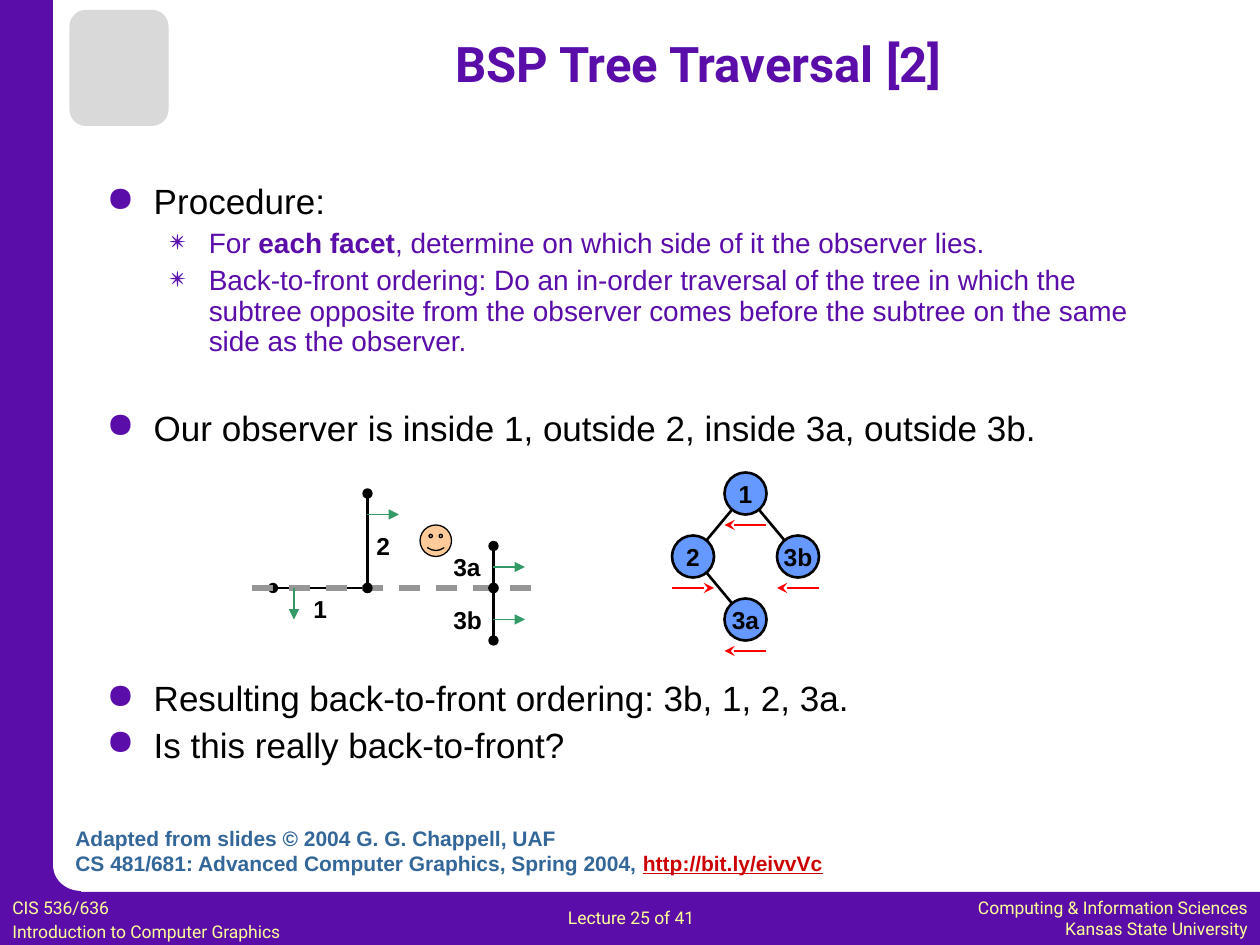
from dataclasses import dataclass

import pptx
import pptx.dml.color
import pptx.enum.dml
import pptx.enum.shapes
import pptx.enum.text
import pptx.oxml.ns
import pptx.util
from lxml import etree

Cm = pptx.util.Cm
Pt = pptx.util.Pt
SHAPE = pptx.enum.shapes.MSO_SHAPE
ALIGN = pptx.enum.text.PP_ALIGN
ANCHOR = pptx.enum.text.MSO_ANCHOR


@dataclass(frozen=True)
class Theme:
    purple: str = "5B0DAA"
    white: str = "FFFFFF"
    black: str = "000000"
    footer: str = "FFFF99"
    credit: str = "336699"
    link: str = "CC0000"
    node: str = "6699FF"
    travel: str = "FF0000"
    normal: str = "339966"
    plane: str = "969696"
    face: str = "FFCC99"
    emblem: str = "D9D9D9"
    heading_font: str = "Roboto"
    text_font: str = "Arial"
    title_size: int = 28
    topic_size: int = 20
    detail_size: int = 16
    label_size: int = 14
    credit_size: int = 12
    footer_size: int = 10


THEME = Theme()
GRID = 2.54 / 12
NODE_RADIUS = 2


def rgb(color):
    return pptx.dml.color.RGBColor.from_string(color)


def grid(*steps):
    return [Cm(step * GRID) for step in steps]


def style(paragraph, size, color, font=THEME.text_font, bold=False):
    paragraph.font.name = font
    paragraph.font.size = Pt(size)
    paragraph.font.bold = bold
    paragraph.font.color.rgb = rgb(color)


def add_figure(slide, kind, box, fill, outline=None, weight=1.5):
    figure = slide.shapes.add_shape(kind, *box)
    figure.shadow.inherit = False
    figure.fill.solid()
    figure.fill.fore_color.rgb = rgb(fill)
    if outline:
        figure.line.color.rgb = rgb(outline)
        figure.line.width = Pt(weight)
    else:
        figure.line.fill.background()
    return figure


def add_line(slide, start, end, color, weight=1.5, head=None, tail=None, dashed=False):
    line = slide.shapes.add_connector(
        pptx.enum.shapes.MSO_CONNECTOR.STRAIGHT, *grid(*start, *end))
    line.line.color.rgb = rgb(color)
    line.line.width = Pt(weight)
    if dashed:
        line.line.dash_style = pptx.enum.dml.MSO_LINE.DASH
    outline = line.line._get_or_add_ln()
    for tag, arrow in (("a:headEnd", head), ("a:tailEnd", tail)):
        if arrow:
            etree.SubElement(outline, pptx.oxml.ns.qn(tag), type=arrow)
    etree.SubElement(line._element.spPr, pptx.oxml.ns.qn("a:effectLst"))


def add_text(slide, box, lines, size, color, font=THEME.text_font, bold=False,
             align=ALIGN.LEFT, anchor=ANCHOR.TOP, gap=0):
    frame = slide.shapes.add_textbox(*box).text_frame
    frame.word_wrap = True
    frame.vertical_anchor = anchor
    for index, line in enumerate(lines):
        paragraph = frame.paragraphs[0] if index == 0 else frame.add_paragraph()
        paragraph.text = line
        paragraph.alignment = align
        if index:
            paragraph.space_before = Pt(gap)
        style(paragraph, size, color, font, bold)
    return frame


def add_bullet(paragraph, symbol, margin, hanging):
    properties = paragraph._p.get_or_add_pPr()
    properties.set("marL", str(Cm(margin)))
    properties.set("indent", str(-Cm(hanging)))
    bullet_color = etree.SubElement(properties, pptx.oxml.ns.qn("a:buClr"))
    etree.SubElement(bullet_color, pptx.oxml.ns.qn("a:srgbClr"), val=THEME.purple)
    etree.SubElement(properties, pptx.oxml.ns.qn("a:buChar"), char=symbol)


def add_body(slide):
    frame = slide.shapes.add_textbox(Cm(1.9), Cm(3.6), Cm(22.07), Cm(13.13)).text_frame
    frame.word_wrap = True
    points = [
        (0, 0, ["Procedure:"]),
        (1, 4, ["For ", "each facet", ", determine on which side of it the observer lies."]),
        (1, 4, ["Back-to-front ordering: Do an in-order traversal of the tree in which the "
                "subtree opposite from the observer comes before the subtree on the same "
                "side as the observer."]),
        (0, 30.5, ["Our observer is inside 1, outside 2, inside 3a, outside 3b."]),
        (0, 133, ["Resulting back-to-front ordering: 3b, 1, 2, 3a."]),
        (0, 5, ["Is this really back-to-front?"]),
    ]
    for index, (level, gap, parts) in enumerate(points):
        paragraph = frame.paragraphs[0] if index == 0 else frame.add_paragraph()
        paragraph.line_spacing = 0.9
        if gap:
            paragraph.space_before = Pt(gap)
        if level:
            paragraph.level = level
            add_bullet(paragraph, "✴", 2.06, 0.79)
            style(paragraph, THEME.detail_size, THEME.purple)
        else:
            add_bullet(paragraph, "●", 0.95, 0.95)
            style(paragraph, THEME.topic_size, THEME.black)
        for position, part in enumerate(parts):
            run = paragraph.add_run()
            run.text = part
            if position == 1:
                run.font.bold = True


def add_frame(slide):
    for box in ((0, 17.98, 25.4, 1.07), (0, 0, 1.07, 19.05), (0.51, 17.4, 1.12, 1.12)):
        add_figure(slide, SHAPE.RECTANGLE, map(Cm, box), THEME.purple)
    add_figure(slide, SHAPE.OVAL, map(Cm, (1.07, 16.92, 1.12, 1.04)), THEME.white)
    add_figure(slide, SHAPE.ROUNDED_RECTANGLE, map(Cm, (1.4, 0.2, 2, 2.34)), THEME.emblem)
    footers = [
        ((0, 17.95, 7.5, 1.1), ["CIS 536/636", "Introduction to Computer Graphics"],
         ALIGN.LEFT, 2),
        ((11.2, 18.15, 4, 0.7), ["Lecture 25 of 41"], ALIGN.LEFT, 0),
        ((18.24, 17.95, 7.16, 1.1),
         ["Computing & Information Sciences", "Kansas State University"], ALIGN.RIGHT, 0),
    ]
    for box, lines, align, gap in footers:
        add_text(slide, map(Cm, box), lines, THEME.footer_size, THEME.footer,
                 THEME.heading_font, align=align, gap=gap)


def add_scene(slide):
    walls = [((26, 56), (35, 56)), ((35, 47), (35, 56)),
             ((47, 52), (47, 56)), ((47, 56), (47, 61))]
    add_line(slide, *walls[0], THEME.black, head="oval", tail="oval")
    add_line(slide, (24, 56), (52, 56), THEME.plane, weight=3, dashed=True)
    for start, end in walls[1:]:
        add_line(slide, start, end, THEME.black, head="oval", tail="oval")
    for (x, y), (dx, dy) in (((28, 56), (0, 3)), ((35, 49), (3, 0)),
                             ((47, 54), (3, 0)), ((47, 59), (3, 0))):
        add_line(slide, (x, y), (x + dx, y + dy), THEME.normal, weight=0.75, tail="triangle")
    for name, x, y, width, align in (("1", 28, 56, 5, ALIGN.CENTER),
                                     ("2", 34, 50, 5, ALIGN.CENTER),
                                     ("3a", 42, 52, 6, ALIGN.LEFT),
                                     ("3b", 42, 57, 6, ALIGN.LEFT)):
        add_text(slide, grid(x, y, width, 4), [name], THEME.label_size, THEME.black,
                 bold=True, align=align)
    add_figure(slide, SHAPE.SMILEY_FACE, grid(40, 50, 3, 3), THEME.face, THEME.black, 0.75)


def add_tree(slide):
    nodes = {"1": (71, 47), "2": (66, 53), "3b": (76, 53), "3a": (71, 59)}
    for parent, child in (("1", "2"), ("1", "3b"), ("2", "3a")):
        add_line(slide, nodes[parent], nodes[child], THEME.black)
    for name, (x, y) in nodes.items():
        node = add_figure(slide, SHAPE.OVAL,
                          grid(x - NODE_RADIUS, y - NODE_RADIUS, 2 * NODE_RADIUS, 2 * NODE_RADIUS),
                          THEME.node, THEME.black)
        frame = node.text_frame
        frame.word_wrap = False
        frame.vertical_anchor = ANCHOR.MIDDLE
        frame.margin_left = frame.margin_right = 0
        frame.text = name
        frame.paragraphs[0].alignment = ALIGN.CENTER
        style(frame.paragraphs[0], THEME.label_size, THEME.black, bold=True)
        reach = NODE_RADIUS if name == "2" else -NODE_RADIUS
        add_line(slide, (x - reach, y + 3), (x + reach, y + 3), THEME.travel, tail="stealth")


def add_credit(slide):
    frame = add_text(slide, map(Cm, (1.27, 16.51, 16.5, 1.27)),
                     ["Adapted from slides © 2004 G. G. Chappell, UAF",
                      "CS 481/681: Advanced Computer Graphics, Spring 2004, "],
                     THEME.credit_size, THEME.credit, bold=True)
    address = frame.paragraphs[1].add_run()
    address.text = "http://bit.ly/eivvVc"
    address.font.underline = True
    address.font.color.rgb = rgb(THEME.link)


def main():
    deck = pptx.Presentation()
    deck.slide_width, deck.slide_height = Cm(25.4), Cm(19.05)
    slide = deck.slides.add_slide(deck.slide_layouts[6])
    add_frame(slide)
    add_text(slide, map(Cm, (3.18, 0.21, 21.8, 2.12)), ["BSP Tree Traversal [2]"],
             THEME.title_size, THEME.purple, THEME.heading_font, bold=True,
             align=ALIGN.CENTER, anchor=ANCHOR.MIDDLE)
    add_body(slide)
    add_scene(slide)
    add_tree(slide)
    add_credit(slide)
    deck.save("out.pptx")


if __name__ == "__main__":
    main()
